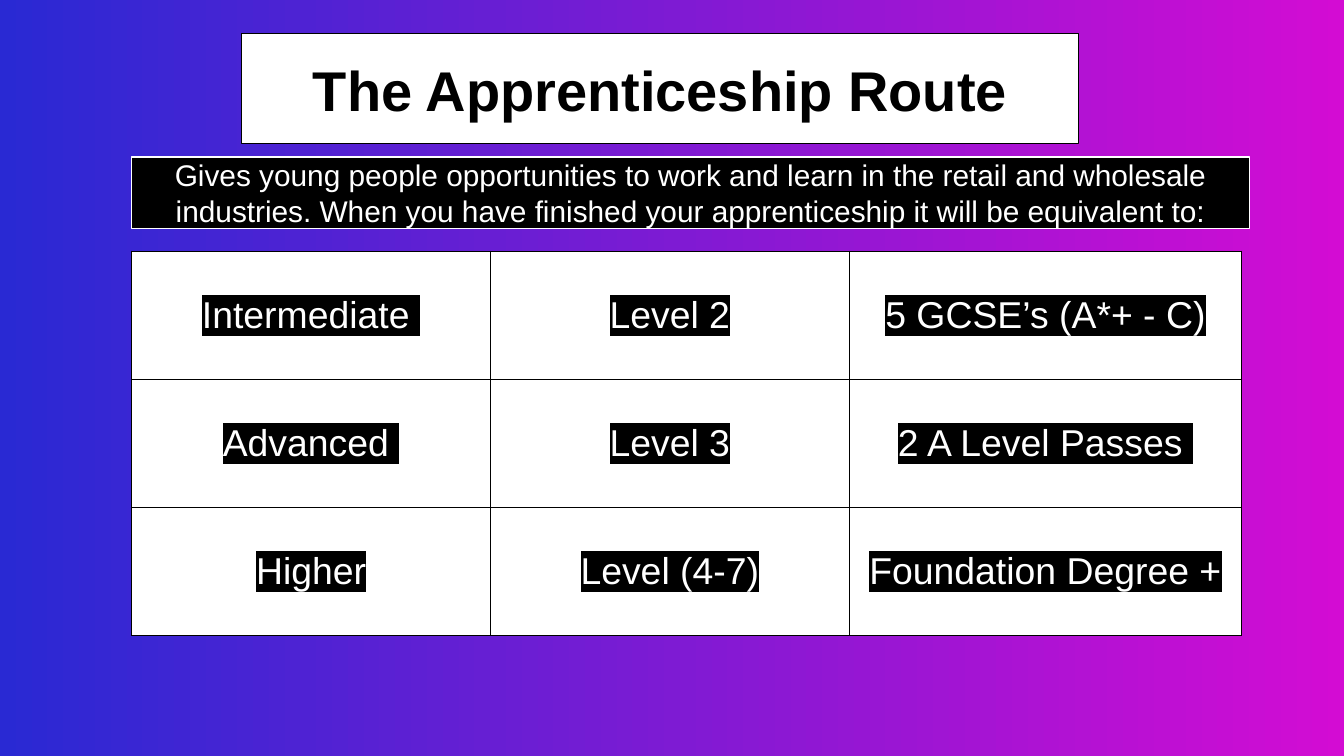
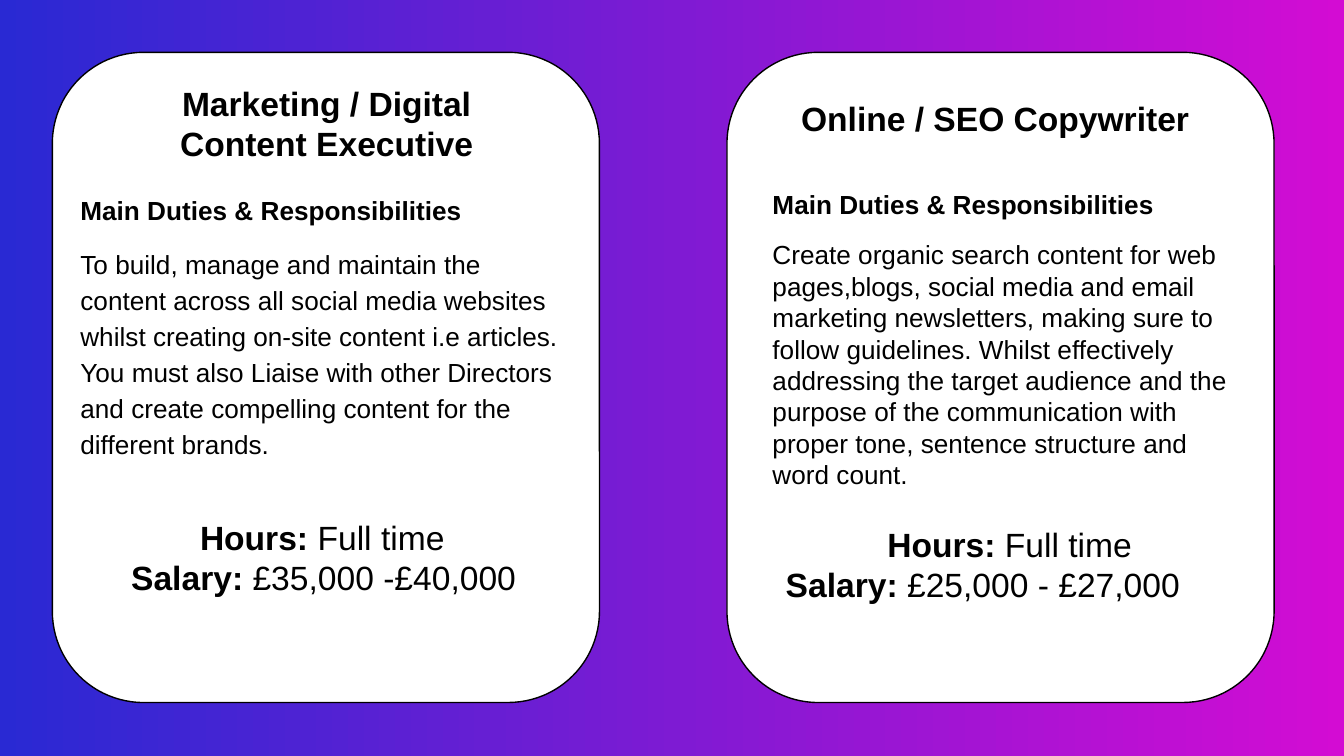
import pptx
import pptx.util
import pptx.dml.color
import pptx.enum.shapes
import pptx.enum.text
import pptx.oxml
import pptx.oxml.ns

Cm = pptx.util.Cm
Pt = pptx.util.Pt
RGBColor = pptx.dml.color.RGBColor
SHAPE = pptx.enum.shapes.MSO_SHAPE
MIDDLE = pptx.enum.text.MSO_ANCHOR.MIDDLE
CENTER = pptx.enum.text.PP_ALIGN.CENTER
LEFT = pptx.enum.text.PP_ALIGN.LEFT

BLACK = RGBColor(0x00, 0x00, 0x00)
WHITE = RGBColor(0xFF, 0xFF, 0xFF)
PINK = RGBColor(0xD3, 0x0C, 0xD3)
BLUE = RGBColor(0x29, 0x29, 0xD3)
FONT = "Arial"
INSET = Cm(0.25)
EDGE = Pt(0.75)

LEVELS = [
    ("Intermediate ", "Level 2", "5 GCSE’s (A*+ - C)"),
    ("Advanced ", "Level 3", "2 A Level Passes "),
    ("Higher", "Level (4-7)", "Foundation Degree +"),
]
JOBS = [
    dict(
        left=0.99, title="Marketing / Digital Content Executive", mark=None,
        duty="To build, manage and maintain the content across all social media "
             "websites whilst creating on-site content i.e articles. You must also "
             "Liaise with other Directors and create compelling content for the "
             "different brands.",
        style=dict(pitch=1.15, before=10, after=10), pay=" £35,000 -£40,000",
        head=(1.02, 0.33, 8.33, 1.63), body=(0.28, 2.34, 9.8, 4.83),
        foot=(1.24, 8.53, 7.9, 1.73)),
    dict(
        left=13.74, title="Online / SEO Copywriter", mark=WHITE,
        duty="Create organic search content for web pages,blogs, social media and "
             "email marketing newsletters, making sure to follow guidelines. Whilst "
             "effectively addressing the target audience and the purpose of the "
             "communication with proper tone, sentence structure and word count.",
        style=dict(before=10), pay=" £25,000 - £27,000",
        head=(0.79, 0.61, 8.56, 1.73), body=(0.61, 2.24, 9.14, 3.48),
        foot=(0.86, 8.66, 9.14, 1.73)),
]


def add_run(para, text, size, color=BLACK, bold=False, mark=None):
    """Add one run, with a highlight if a mark colour is given."""
    run = para.add_run()
    run.text = text
    font = run.font
    font.size, font.bold, font.name = Pt(size), bold, FONT
    font.color.rgb = color
    if mark is not None:
        glow = pptx.oxml.parse_xml(
            f'<a:highlight {pptx.oxml.ns.nsdecls("a")}>'
            f'<a:srgbClr val="{mark}"/></a:highlight>')
        fill = run._r.get_or_add_rPr().find(pptx.oxml.ns.qn("a:solidFill"))
        fill.addnext(glow)


def add_para(frame, align=LEFT, first=False, pitch=None, before=None, after=None):
    """Return a paragraph of the frame with its alignment and spacing."""
    para = frame.paragraphs[0] if first else frame.add_paragraph()
    para.alignment = align
    if pitch:
        para.line_spacing = pitch
    if before:
        para.space_before = Pt(before)
    if after:
        para.space_after = Pt(after)
    return para


def set_frame(frame):
    """Wrap the frame's text and set its insets."""
    frame.word_wrap = True
    frame.margin_left = frame.margin_right = INSET
    frame.margin_top = frame.margin_bottom = INSET
    return frame


def add_panel(slide, kind, box, fill, line):
    """Draw a filled, outlined shape and return its text frame."""
    shape = slide.shapes.add_shape(kind, *map(Cm, box))
    shape.shadow.inherit = False
    shape.fill.solid()
    shape.fill.fore_color.rgb = fill
    shape.line.color.rgb = line
    shape.line.width = EDGE
    return set_frame(shape.text_frame)


def add_label(slide, box, size, text, fill, color, bold=False):
    """Draw a rectangle with centred text."""
    frame = add_panel(slide, SHAPE.RECTANGLE, box, fill, color)
    frame.vertical_anchor = MIDDLE
    add_run(add_para(frame, CENTER, True), text, size, color, bold)


def add_text(slide, left, top, box):
    """Add a text box placed relative to a corner and return its frame."""
    x, y, wide, high = box
    item = slide.shapes.add_textbox(Cm(left + x), Cm(top + y), Cm(wide), Cm(high))
    return set_frame(item.text_frame)


def set_cell(cell, text):
    """Fill, border and write one table cell."""
    cell.fill.solid()
    cell.fill.fore_color.rgb = WHITE
    cell.vertical_anchor = MIDDLE
    cell.margin_left = cell.margin_right = INSET
    cell.margin_top = cell.margin_bottom = INSET
    props = cell._tc.get_or_add_tcPr()
    for spot, side in enumerate("LRTB"):
        props.insert(spot, pptx.oxml.parse_xml(
            f'<a:ln{side} {pptx.oxml.ns.nsdecls("a")} w="{int(EDGE)}"><a:solidFill>'
            f'<a:srgbClr val="{BLACK}"/></a:solidFill></a:ln{side}>'))
    para = add_para(cell.text_frame, CENTER, True)
    add_run(para, text, 20, WHITE, mark=BLACK)


def add_grid(slide, left, top, cols, high, rows):
    """Add the table of levels."""
    item = slide.shapes.add_table(
        len(rows), len(cols), Cm(left), Cm(top), Cm(sum(cols)), Cm(high * len(rows)))
    table = item.table
    table.first_row = table.horz_banding = False
    for col, wide in zip(table.columns, cols):
        col.width = Cm(wide)
    for row, texts in zip(table.rows, rows):
        row.height = Cm(high)
        for cell, text in zip(row.cells, texts):
            set_cell(cell, text)


def add_card(slide, left, top, wide, high, job):
    """Draw one job card with its title, duties and pay."""
    add_panel(slide, SHAPE.ROUNDED_RECTANGLE, (left, top, wide, high), WHITE, BLACK)
    head = add_text(slide, left, top, job["head"])
    add_run(add_para(head, CENTER, True), job["title"], 18, bold=True, mark=job["mark"])
    body = add_text(slide, left, top, job["body"])
    para = add_para(body, first=True, pitch=1.15)
    add_run(para, "Main Duties & Responsibilities", 14, bold=True)
    add_run(add_para(body, **job["style"]), job["duty"], 14, mark=WHITE)
    foot = add_text(slide, left, top, job["foot"])
    hours = add_para(foot, CENTER, True)
    add_run(hours, "Hours:", 18, bold=True)
    add_run(hours, " Full time ", 18)
    pay = add_para(foot)
    add_run(pay, "Salary:", 18, bold=True)
    add_run(pay, job["pay"], 18)


def add_slide(deck):
    """Add a blank slide with the shared gradient."""
    slide = deck.slides.add_slide(deck.slide_layouts[6])
    fill = slide.background.fill
    fill.gradient()
    fill.gradient_angle = 180
    for stop, color, spot in zip(fill.gradient_stops, (PINK, BLUE), (0, 1)):
        stop.color.rgb = color
        stop.position = spot
    return slide


def add_route(deck):
    """Build the slide on the apprenticeship route."""
    slide = add_slide(deck)
    add_label(slide, (4.57, 0.64, 15.82, 2.08), 30, "The Apprenticeship Route",
              WHITE, BLACK, True)
    add_label(slide, (2.49, 2.97, 21.13, 1.35), 16,
              "Gives young people opportunities to work and learn in the retail and "
              "wholesale industries. When you have finished your apprenticeship it "
              "will be equivalent to:", BLACK, WHITE)
    add_grid(slide, 2.49, 4.75, (6.78, 6.78, 7.42), 2.42, LEVELS)


def add_jobs(deck):
    """Build the slide with the job cards."""
    slide = add_slide(deck)
    for job in JOBS:
        add_card(slide, job["left"], 0.99, 10.34, 12.29, job)


def main():
    """Build and save the deck."""
    deck = pptx.Presentation()
    deck.slide_width, deck.slide_height = Cm(25.4), Cm(14.29)
    add_route(deck)
    add_jobs(deck)
    deck.save("out.pptx")


if __name__ == "__main__":
    main()
